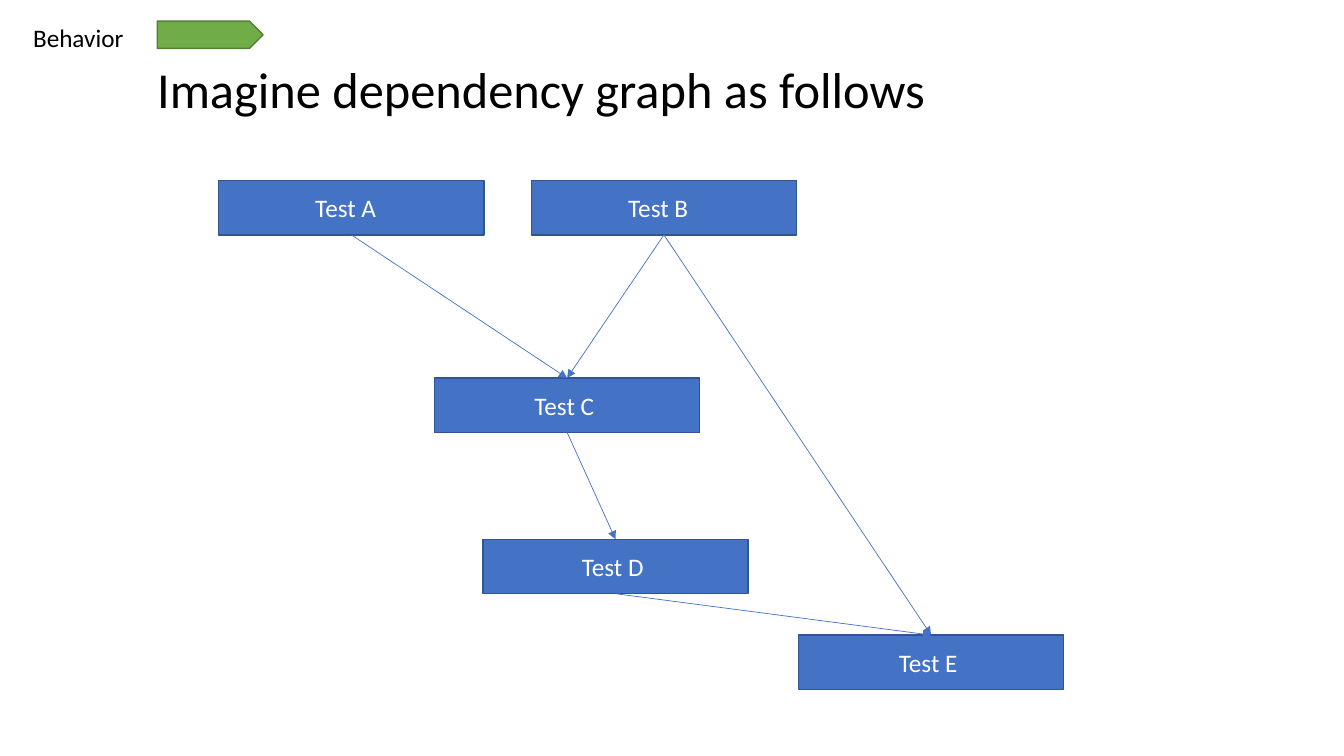
from pptx import Presentation
from pptx.dml.color import RGBColor
from pptx.enum.shapes import MSO_CONNECTOR as Conn, MSO_SHAPE as Geo
from pptx.enum.text import MSO_ANCHOR as Anchor, MSO_AUTO_SIZE as Auto, PP_ALIGN as Align
from pptx.oxml.ns import qn
from pptx.util import Pt
from lxml.etree import SubElement as Sub

PX = 9144
BLUE, NAVY, GREEN, MOSS = "4472C4", "325491", "70AD47", "538035"
WHITE, BLACK = "FFFFFF", "000000"
WIDE, HIGH = 263, 54
NODES = {
    "C": (431, 375, "Test C "),
    "A": (217, 179, "Test A  "),
    "B": (527, 179, "Test B  "),
    "D": (479, 535, "Test D "),
    "E": (792, 630, "Test E "),
}
EDGES = ("AC", "BC", "CD", "DE", "BE")


def px(*nums):
    return [n * PX for n in nums]


def rgb(code):
    return RGBColor.from_string(code)


def put(obj, vals):
    for name, val in vals.items():
        setattr(obj, name, val)


class Deck:
    """Draws styled boxes, labels and arrows on one slide."""

    def __init__(self, wide, high, font):
        self.prs = Presentation()
        self.font = font
        put(self.prs, dict(zip(("slide_width", "slide_height"), px(wide, high))))
        self.slide = self.prs.slides.add_slide(self.prs.slide_layouts[6])
        self.shapes = self.slide.shapes
        back = self.slide.background.fill
        back.solid()
        back.fore_color.rgb = rgb(WHITE)

    def line(self, item, code, width):
        item.line.color.rgb = rgb(code)
        item.line.width = Pt(width)

    def text(self, item, words, size, code, align, frame):
        put(item.text_frame, {"word_wrap": True, **frame})
        para = item.text_frame.paragraphs[0]
        para.alignment = align
        run = para.add_run()
        run.text = words
        put(run.font, {"name": self.font, "size": Pt(size)})
        run.font.color.rgb = rgb(code)

    def shape(self, geo, spot, fill, edge):
        item = self.shapes.add_shape(geo, *px(*spot))
        item.shadow.inherit = False
        item.fill.solid()
        item.fill.fore_color.rgb = rgb(fill)
        self.line(item, edge, 1)
        return item

    def node(self, left, top, words):
        item = self.shape(Geo.RECTANGLE, (left, top, WIDE, HIGH), BLUE, NAVY)
        self.text(item, words, 18, WHITE, Align.CENTER, {"vertical_anchor": Anchor.MIDDLE})
        return item

    def label(self, spot, words, size):
        item = self.shapes.add_textbox(*px(*spot))
        self.text(item, words, size, BLACK, Align.LEFT, {"auto_size": Auto.SHAPE_TO_FIT_TEXT})

    def arrow(self, start, end):
        item = self.shapes.add_connector(Conn.STRAIGHT, 0, 0, 0, 0)
        item.begin_connect(start, 2)
        item.end_connect(end, 0)
        self.line(item, BLUE, 0.5)
        props = item.element.spPr
        Sub(props.find(qn("a:ln")), qn("a:tailEnd"), type="triangle")
        Sub(props, qn("a:effectLst"))


def main():
    deck = Deck(1333, 750, "Calibri")
    nodes = {key: deck.node(*spot) for key, spot in NODES.items()}
    for start, end in EDGES:
        deck.arrow(nodes[start], nodes[end])
    deck.label((146, 53, 992, 71), "Imagine dependency graph as follows", 36)
    deck.label((23, 17, 133, 40), "Behavior", 18)
    deck.shape(Geo.PENTAGON, (156, 21, 105, 27), GREEN, MOSS)
    deck.prs.save("out.pptx")


if __name__ == "__main__":
    main()
